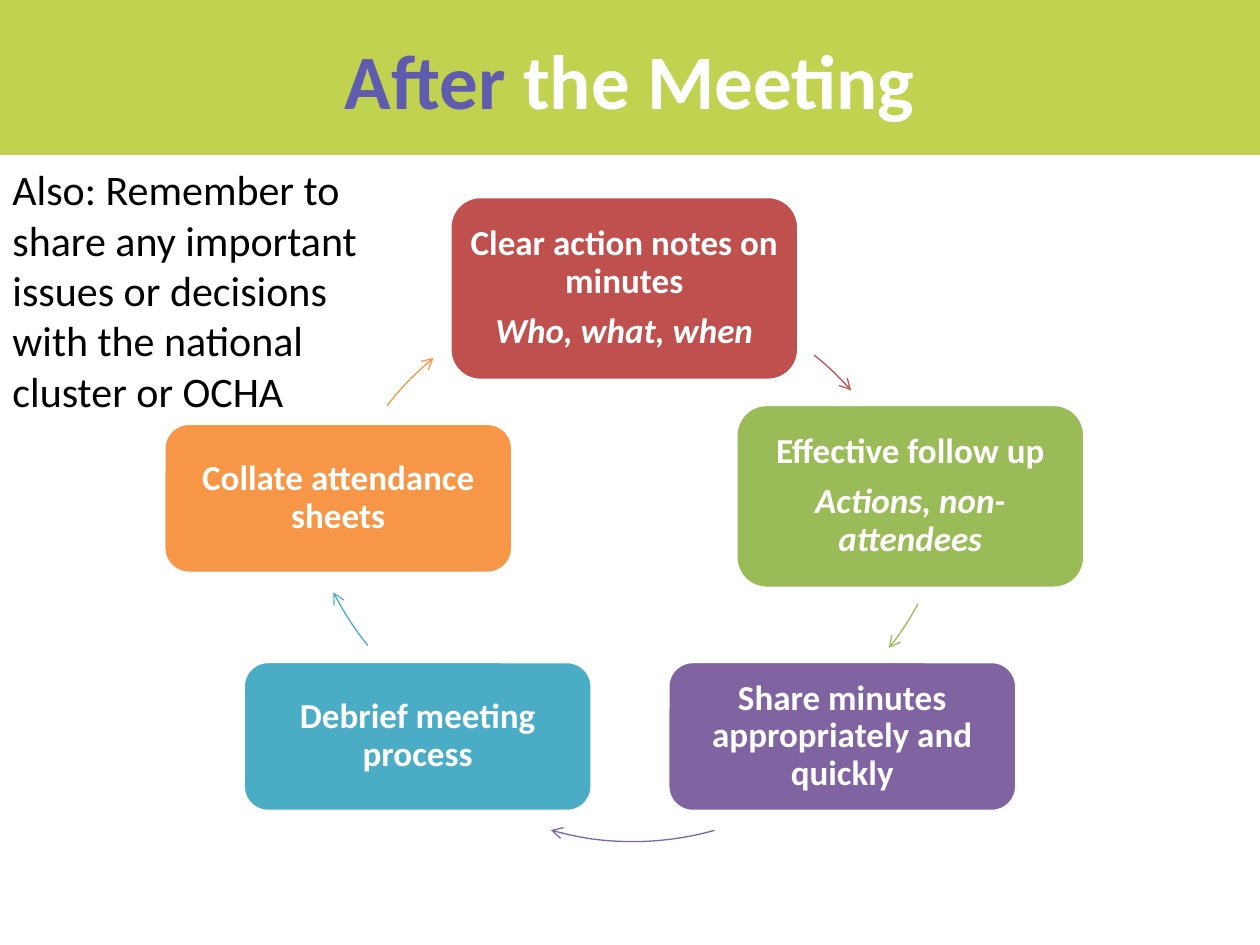
from dataclasses import dataclass

from lxml import etree
from pptx import Presentation
from pptx.dml.color import RGBColor
from pptx.enum import shapes, text
from pptx.oxml import ns
from pptx.util import Inches, Pt


@dataclass(frozen=True)
class Theme:
    font: str = "Calibri"
    band: str = "C1D150"
    accent: str = "5F5BAE"
    light: str = "FFFFFF"
    dark: str = "000000"
    title_size: int = 44
    note_size: int = 24
    step_size: int = 20


THEME = Theme()
RING = 4.77  # diameter of the circle the arrows follow

# Step lines, colour, box (left, top, height),
# then its outgoing arrow: ring (left, top) and start and end degrees
STEPS = [
    (["Clear action notes on minutes", "Who, what, when"], "C0504D",
     (3.57, 1.56, 1.46), (2.58, 2.29), (308.9, 318.6)),
    (["Effective follow up", "Actions, non-attendees"], "9BBB59",
     (5.84, 3.21, 1.46), (2.8, 1.28), (28.2, 38.3)),
    (["Share minutes appropriately and quickly"], "8064A2",
     (5.3, 5.25, 1.19), (2.64, 1.91), (74.3, 105.9)),
    (["Debrief meeting process"], "4BACC6",
     (1.93, 5.25, 1.19), (2.39, 1.24), (141.1, 153.2)),
    (["Collate attendance sheets"], "F79646",
     (1.3, 3.36, 1.19), (2.57, 2.3), (217.9, 230.6)),
]
STEP_WIDTH = 2.77


def rgb(value):
    return RGBColor.from_string(value)


def style(font, size, color, bold=False, italic=False):
    font.name = THEME.font
    font.size = Pt(size)
    font.color.rgb = rgb(color)
    font.bold = bold
    font.italic = italic


def add_preset(slide, preset, left, top, width, height):
    shape = slide.shapes.add_shape(
        preset, Inches(left), Inches(top), Inches(width), Inches(height))
    shape.shadow.inherit = False
    return shape


def add_title(slide, left, top, width, height):
    band = add_preset(slide, shapes.MSO_SHAPE.RECTANGLE,
                      left, top - 0.02, width, height)
    band.fill.solid()
    band.fill.fore_color.rgb = rgb(THEME.band)
    band.line.fill.background()

    title = slide.shapes.add_textbox(
        Inches(left), Inches(top), Inches(width), Inches(height))
    frame = title.text_frame
    frame.word_wrap = True
    frame.vertical_anchor = text.MSO_ANCHOR.MIDDLE
    heading = frame.paragraphs[0]
    heading.alignment = text.PP_ALIGN.CENTER
    for words, color in (("After ", THEME.accent), ("the Meeting", THEME.light)):
        run = heading.add_run()
        run.text = words
        style(run.font, THEME.title_size, color, bold=True)


def add_step(slide, lines, color, left, top, width, height):
    step = add_preset(slide, shapes.MSO_SHAPE.ROUNDED_RECTANGLE,
                      left, top, width, height)
    step.fill.solid()
    step.fill.fore_color.rgb = rgb(color)
    step.line.color.rgb = rgb(THEME.light)
    step.line.width = Pt(2)

    frame = step.text_frame
    frame.word_wrap = True
    frame.vertical_anchor = text.MSO_ANCHOR.MIDDLE
    frame.margin_left = frame.margin_right = Inches(0.08)
    frame.margin_top = frame.margin_bottom = Inches(0.08)
    frame.text = "\n".join(lines)
    for index, line in enumerate(frame.paragraphs):
        line.alignment = text.PP_ALIGN.CENTER
        line.line_spacing = 0.9
        line.space_before = Pt(7 if index else 0)
        style(line.runs[0].font, THEME.step_size, THEME.light,
              bold=True, italic=index > 0)


def add_arc_arrow(slide, color, left, top, degrees):
    arrow = add_preset(slide, shapes.MSO_SHAPE.ARC, left, top, RING, RING)
    for index, angle in enumerate(degrees):
        arrow.adjustments[index] = angle * 0.6  # 60000ths of a degree / 100000
    arrow.fill.background()
    arrow.line.color.rgb = rgb(color)
    arrow.line.width = Pt(0.75)
    line = arrow.line.fill._xPr
    etree.SubElement(line, ns.qn("a:tailEnd"), type="arrow")


def add_cycle(slide, left, top):
    for lines, color, (x, y, height), (ring_x, ring_y), degrees in STEPS:
        add_step(slide, lines, color, left + x, top + y, STEP_WIDTH, height)
        add_arc_arrow(slide, color, left + ring_x, top + ring_y, degrees)


def add_reminder(slide, left, top, width, height):
    reminder = slide.shapes.add_textbox(
        Inches(left), Inches(top), Inches(width), Inches(height))
    frame = reminder.text_frame
    frame.word_wrap = True
    frame.auto_size = text.MSO_AUTO_SIZE.SHAPE_TO_FIT_TEXT
    frame.text = ("Also: Remember to share any important issues or decisions "
                  "with the national cluster or OCHA")
    style(frame.paragraphs[0].runs[0].font, THEME.note_size, THEME.dark)


def main():
    prs = Presentation()
    prs.slide_width = Inches(10)
    prs.slide_height = Inches(7.5)
    slide = prs.slides.add_slide(prs.slide_layouts[6])
    add_title(slide, 0, 0, 10, 1.25)
    add_cycle(slide, 0, 0)
    add_reminder(slide, 0, 1.25, 2.95, 2.12)
    prs.save("out.pptx")


if __name__ == "__main__":
    main()
